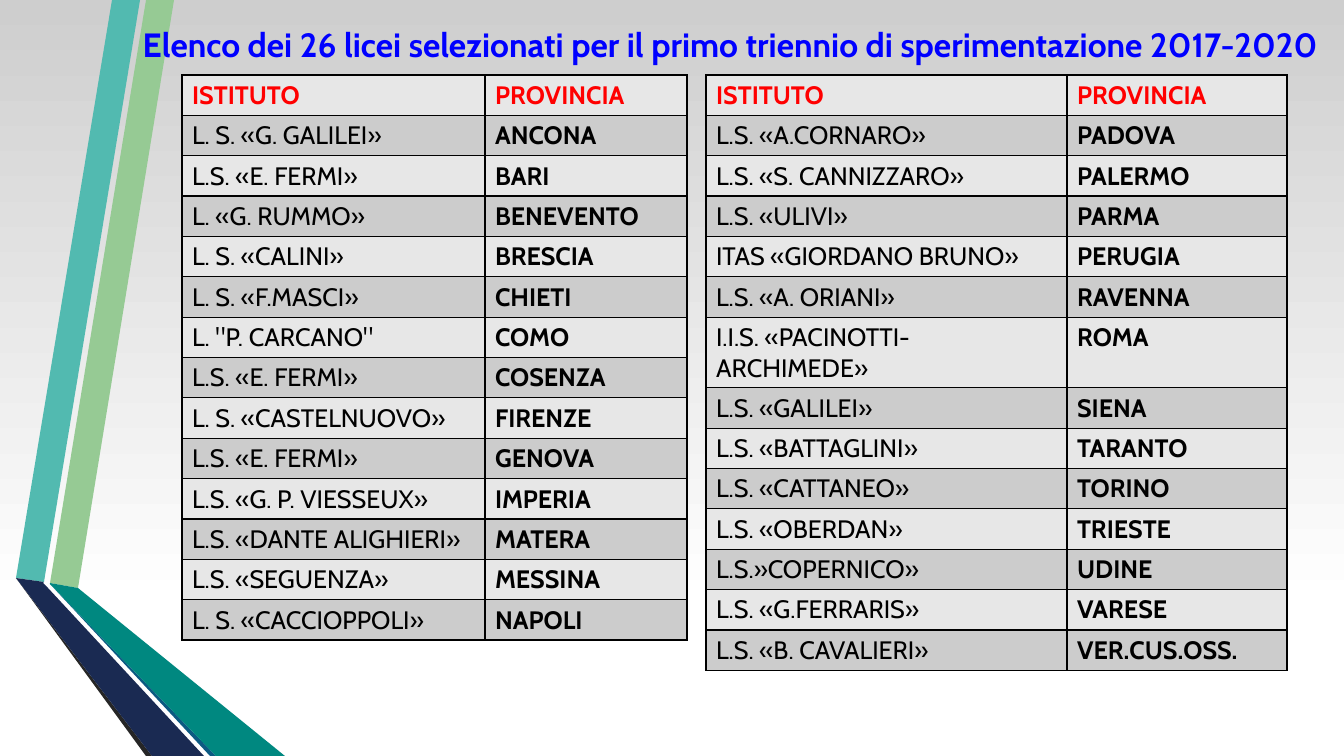
from lxml import etree
from pptx import Presentation
from pptx.dml.color import RGBColor
from pptx.enum.text import MSO_ANCHOR, PP_ALIGN
from pptx.oxml.ns import qn
from pptx.util import Pt

CENTER, MIDDLE = PP_ALIGN.CENTER, MSO_ANCHOR.MIDDLE

TITLE = "Elenco dei 26 licei selezionati per il primo triennio di sperimentazione 2017-2020"
TITLE_BOX = (115, 12, 1230, 64)
HEADER = ("ISTITUTO", "PROVINCIA")
LEFT_SCHOOLS = [
    ("L. S. «G. GALILEI»", "ANCONA"),
    ("L.S. «E. FERMI»", "BARI"),
    ("L. «G. RUMMO»", "BENEVENTO"),
    ("L. S. «CALINI»", "BRESCIA"),
    ("L. S. «F.MASCI»", "CHIETI"),
    ('L. "P. CARCANO"', "COMO"),
    ("L.S. «E. FERMI»", "COSENZA"),
    ("L. S. «CASTELNUOVO»", "FIRENZE"),
    ("L.S. «E. FERMI»", "GENOVA"),
    ("L.S. «G. P. VIESSEUX»", "IMPERIA"),
    ("L.S. «DANTE ALIGHIERI»", "MATERA"),
    ("L.S. «SEGUENZA»", "MESSINA"),
    ("L. S. «CACCIOPPOLI»", "NAPOLI"),
]
RIGHT_SCHOOLS = [
    ("L.S. «A.CORNARO»", "PADOVA"),
    ("L.S. «S. CANNIZZARO»", "PALERMO"),
    ("L.S. «ULIVI»", "PARMA"),
    ("ITAS «GIORDANO BRUNO»", "PERUGIA"),
    ("L.S. «A. ORIANI»", "RAVENNA"),
    ("I.I.S. «PACINOTTI-ARCHIMEDE»", "ROMA"),
    ("L.S. «GALILEI»", "SIENA"),
    ("L.S. «BATTAGLINI»", "TARANTO"),
    ("L.S. «CATTANEO»", "TORINO"),
    ("L.S. «OBERDAN»", "TRIESTE"),
    ("L.S.»COPERNICO»", "UDINE"),
    ("L.S. «G.FERRARIS»", "VARESE"),
    ("L.S. «B. CAVALIERI»", "VER.CUS.OSS."),
]
TABLES = [(182, (303, 202), LEFT_SCHOOLS), (706, (361, 220), RIGHT_SCHOOLS)]
TABLE_TOP, ROW_H = 75, 40
RIBBONS = [
    ("96CA94", [(50, 583), (78, 588), (174, 0), (146, 0)]),
    ("52BAB0", [(140, 0), (112, 0), (16, 578), (44, 582)]),
    ("262626", [(16, 578), (146, 756), (152, 756)]),
    ("0C5A82", [(50, 584), (210, 756), (216, 756)]),
    ("008880", [(50, 584), (216, 756), (285, 756), (78, 588), (50, 583)]),
    ("1A2A52", [(204, 756), (48, 588), (43, 583), (44, 582), (16, 578), (152, 756)]),
]
THEME = {
    "font": "Cabin", "title_size": 24, "cell_size": 18, "border_width": 1,
    "title": "0000FF", "header": "FF0000", "text": "000000", "border": "000000",
    "bands": ("E7E7E7", "CCCCCC"),
    "background": ((0.2, "FFFFFF"), (1, "CECECE")),
}
SLIDE_W, SLIDE_H = 1344, 756
SCALE = 12192000 / SLIDE_W


def px(n):
    return round(n * SCALE)


def rgb(code):
    return RGBColor.from_string(code)


def style(p, size, color, bold):
    f = p.font
    f.name, f.size, f.bold = THEME["font"], Pt(size), bold
    f.color.rgb = rgb(color)


def paint_background(s):
    fill = s.background.fill
    fill.gradient()
    fill.gradient_angle = 90
    for stop, (position, color) in zip(fill.gradient_stops, THEME["background"]):
        stop.position = position
        stop.color.rgb = rgb(color)


def add_ribbon(s, color, points):
    builder = s.shapes.build_freeform(*points[0], scale=SCALE)
    builder.add_line_segments(points[1:], close=True)
    sp = builder.convert_to_shape()
    sp.shadow.inherit = False
    sp.fill.solid()
    sp.fill.fore_color.rgb = rgb(color)
    sp.line.fill.background()


def add_title(s):
    tf = s.shapes.add_textbox(*map(px, TITLE_BOX)).text_frame
    tf.word_wrap = True
    tf.vertical_anchor = MIDDLE
    p = tf.paragraphs[0]
    p.text = TITLE
    p.alignment = CENTER
    style(p, THEME["title_size"], THEME["title"], True)


def add_borders(cell):
    tc_pr = cell._tc.get_or_add_tcPr()
    for i, side in enumerate(("lnL", "lnR", "lnT", "lnB")):
        ln = etree.Element(qn("a:" + side), w=str(Pt(THEME["border_width"])))
        fill = etree.SubElement(ln, qn("a:solidFill"))
        etree.SubElement(fill, qn("a:srgbClr"), val=THEME["border"])
        tc_pr.insert(i, ln)


def add_school_table(s, left, widths, schools):
    rows = [HEADER] + schools
    frame = s.shapes.add_table(len(rows), len(widths), px(left), px(TABLE_TOP),
                               px(sum(widths)), px(ROW_H * len(rows)))
    table = frame.table
    for column, width in zip(table.columns, widths):
        column.width = px(width)
    for r, values in enumerate(rows):
        table.rows[r].height = px(ROW_H)
        for c, value in enumerate(values):
            cell = table.cell(r, c)
            cell.fill.solid()
            cell.fill.fore_color.rgb = rgb(THEME["bands"][r % 2])
            add_borders(cell)
            p = cell.text_frame.paragraphs[0]
            p.text = value
            color = THEME["text"] if r else THEME["header"]
            style(p, THEME["cell_size"], color, r == 0 or c == 1)


def main():
    prs = Presentation()
    prs.slide_width, prs.slide_height = px(SLIDE_W), px(SLIDE_H)
    s = prs.slides.add_slide(prs.slide_layouts[6])
    paint_background(s)
    for color, points in RIBBONS:
        add_ribbon(s, color, points)
    add_title(s)
    for left, widths, schools in TABLES:
        add_school_table(s, left, widths, schools)
    prs.save("out.pptx")


if __name__ == "__main__":
    main()
